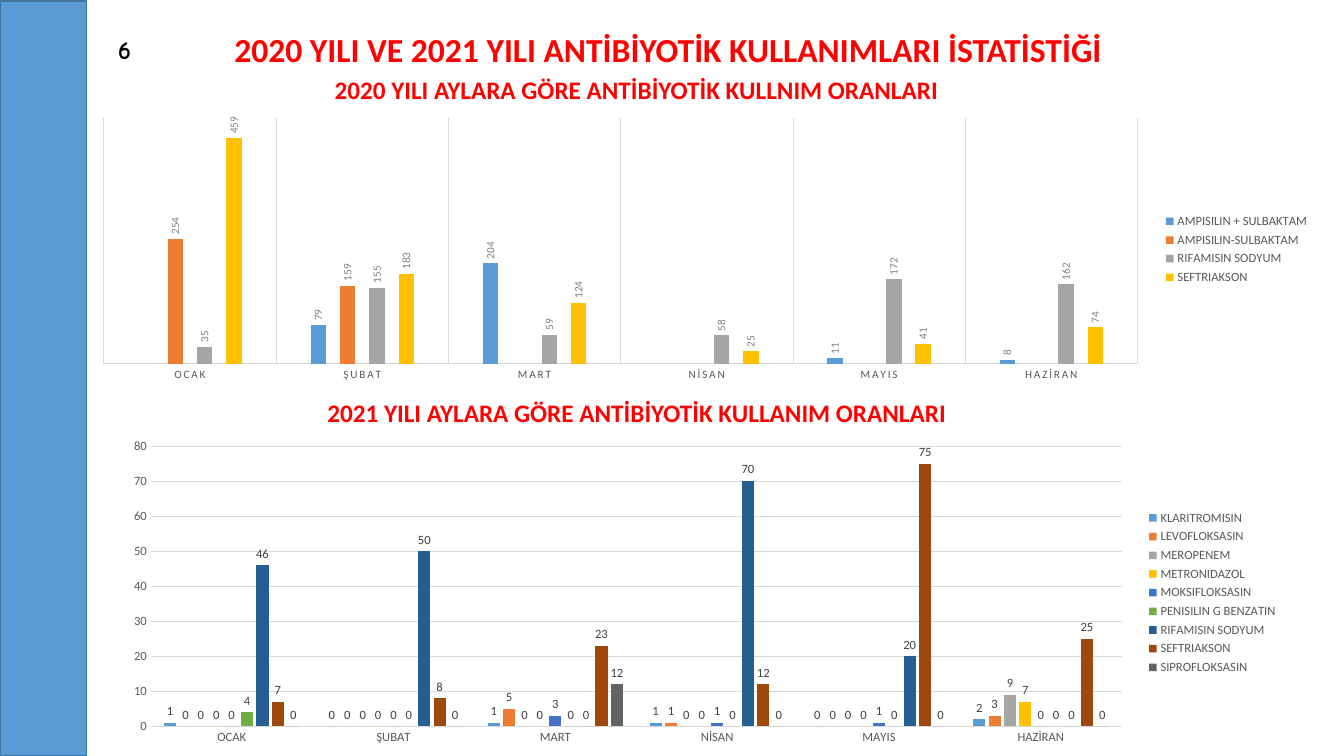
from dataclasses import dataclass
from typing import Optional

from lxml.etree import SubElement
from pptx import Presentation
from pptx.chart.data import CategoryChartData
from pptx.dml.color import RGBColor
from pptx.enum.chart import XL_CHART_TYPE as ChartType
from pptx.enum.chart import XL_LABEL_POSITION as LabelPosition
from pptx.enum.chart import XL_LEGEND_POSITION as LegendPosition
from pptx.enum.chart import XL_TICK_MARK as TickMark
from pptx.enum.shapes import MSO_SHAPE as Preset
from pptx.enum.text import MSO_AUTO_SIZE as AutoSize
from pptx.enum.text import PP_ALIGN as Align
from pptx.oxml.ns import qn
from pptx.util import Cm, Pt

MONTHS = ["OCAK", "ŞUBAT", "MART", "NİSAN", "MAYIS", "HAZİRAN"]
RED, GREY, PALE = "FF0000", "595959", "D9D9D9"


@dataclass
class Box:
    left: float
    top: float
    width: float
    height: float

    def lengths(self) -> tuple:
        return Cm(self.left), Cm(self.top), Cm(self.width), Cm(self.height)


@dataclass
class Drug:
    name: str
    color: str
    uses: list


@dataclass
class YearChart:
    box: Box
    plot: Box
    drugs: list
    gap: int
    overlap: int
    maximum: int
    month_size: int
    label_size: int
    label_color: str
    compact: bool  # upright labels, spaced months, month dividers, no value axis


def rgb(value: str) -> RGBColor:
    return RGBColor.from_string(value)


def style_font(font, size: float, color: str, name: str = "Calibri", bold: bool = False) -> None:
    font.size, font.name, font.bold = Pt(size), name, bold
    font.color.rgb = rgb(color)


def style_line(line, color: str, width: float = 0.75) -> None:
    line.color.rgb = rgb(color)
    line.width = Pt(width)


def add_text(slide, text: str, box: Box, *, size: float, color: str = RED,
             font: str = "Calibri", align: Optional[Align] = Align.CENTER) -> None:
    frame = slide.shapes.add_textbox(*box.lengths()).text_frame
    frame.word_wrap = False
    frame.auto_size = AutoSize.SHAPE_TO_FIT_TEXT
    paragraph = frame.paragraphs[0]
    paragraph.alignment = align
    run = paragraph.add_run()
    run.text = text
    style_font(run.font, size, color, font, bold=True)


def place_plot(chart, box: Box, plot: Box) -> None:
    """Fix the inner plot area, as fractions of the chart box."""
    area = chart._chartSpace.chart.plotArea
    for old in area.findall(qn("c:layout")):
        area.remove(old)
    layout = SubElement(area, qn("c:layout"))
    area.insert(0, layout)
    manual = SubElement(layout, qn("c:manualLayout"))
    settings = {
        "layoutTarget": "inner", "xMode": "edge", "yMode": "edge",
        "x": (plot.left - box.left) / box.width,
        "y": (plot.top - box.top) / box.height,
        "w": plot.width / box.width,
        "h": plot.height / box.height,
    }
    for tag, value in settings.items():
        SubElement(manual, qn(f"c:{tag}")).set("val", str(value))


def add_year_chart(slide, year: YearChart) -> None:
    data = CategoryChartData()
    data.categories = MONTHS
    for drug in year.drugs:
        data.add_series(drug.name, drug.uses)
    chart = slide.shapes.add_chart(ChartType.COLUMN_CLUSTERED, *year.box.lengths(), data).chart
    chart.has_title = False
    style_font(chart.font, 10, "000000")
    place_plot(chart, year.box, year.plot)

    # Legend
    chart.has_legend = True
    chart.legend.position = LegendPosition.RIGHT
    chart.legend.include_in_layout = False
    style_font(chart.legend.font, 9, GREY)

    # Axes
    months, counts = chart.category_axis, chart.value_axis
    for axis in (months, counts):
        axis.major_tick_mark = axis.minor_tick_mark = TickMark.NONE
    style_font(months.tick_labels.font, year.month_size, GREY)
    style_font(counts.tick_labels.font, 9, GREY)
    style_line(months.format.line, PALE)
    counts.format.line.fill.background()
    counts.minimum_scale, counts.maximum_scale = 0, year.maximum
    counts.visible = not year.compact
    counts.has_major_gridlines = not year.compact
    months.has_major_gridlines = year.compact
    style_line((months if year.compact else counts).major_gridlines.format.line, PALE)
    if year.compact:
        next(months._element.iter(qn("a:defRPr"))).set("spc", "120")

    # Columns and their labels
    columns = chart.plots[0]
    columns.vary_by_categories = False
    columns.gap_width, columns.overlap = year.gap, year.overlap
    for series, drug in zip(columns.series, year.drugs):
        series.format.fill.solid()
        series.format.fill.fore_color.rgb = rgb(drug.color)
        series.invert_if_negative = False
        labels = series.data_labels
        labels.show_value = True
        labels.position = LabelPosition.OUTSIDE_END
        style_font(labels.font, year.label_size, year.label_color)
        if year.compact:
            body = next(labels._element.iter(qn("a:bodyPr")))
            body.set("rot", "-5400000")
            body.set("vert", "horz")


def add_side_band(slide) -> None:
    band = slide.shapes.add_shape(Preset.RECTANGLE, *Box(0, 0.03, 2.18, 19.02).lengths())
    band.shadow.inherit = False
    band.fill.solid()
    band.fill.fore_color.rgb = rgb("5B9BD5")
    style_line(band.line, "43739E", 1)


YEAR_2020 = YearChart(
    Box(2.01, 2.82, 31.24, 6.93), Box(2.62, 2.97, 26.05, 6.2),
    [
        Drug("AMPISILIN + SULBAKTAM", "5B9BD5", [None, 79, 204, None, 11, 8]),
        Drug("AMPISILIN-SULBAKTAM", "ED7D31", [254, 159, None, None, None, None]),
        Drug("RIFAMISIN SODYUM", "A5A5A5", [35, 155, 59, 58, 172, 162]),
        Drug("SEFTRIAKSON", "FFC000", [459, 183, 124, 25, 41, 74]),
    ],
    gap=444, overlap=-90, maximum=500, month_size=8,
    label_size=8, label_color="808080", compact=True,
)
YEAR_2021 = YearChart(
    Box(2.79, 10.92, 29.67, 8.03), Box(3.8, 11.24, 24.47, 7.06),
    [
        Drug("KLARITROMISIN", "5B9BD5", [1, 0, 1, 1, 0, 2]),
        Drug("LEVOFLOKSASIN", "ED7D31", [0, 0, 5, 1, 0, 3]),
        Drug("MEROPENEM", "A5A5A5", [0, 0, 0, 0, 0, 9]),
        Drug("METRONIDAZOL", "FFC000", [0, 0, 0, 0, 0, 7]),
        Drug("MOKSIFLOKSASIN", "4472C4", [0, 0, 3, 1, 1, 0]),
        Drug("PENISILIN G BENZATIN", "70AD47", [4, 0, 0, 0, 0, 0]),
        Drug("RIFAMISIN SODYUM", "255E91", [46, 50, 0, 70, 20, 0]),
        Drug("SEFTRIAKSON", "9E480E", [7, 8, 23, 12, 75, 25]),
        Drug("SIPROFLOKSASIN", "636363", [0, 0, 12, 0, 0, 0]),
    ],
    gap=219, overlap=-27, maximum=80, month_size=9,
    label_size=9, label_color="404040", compact=False,
)


def main() -> None:
    deck = Presentation()
    deck.slide_width, deck.slide_height = Cm(33.87), Cm(19.05)
    slide = deck.slides.add_slide(deck.slide_layouts[6])
    add_side_band(slide)

    # Headings and page number
    add_text(slide, "2020 YILI VE 2021 YILI ANTİBİYOTİK KULLANIMLARI İSTATİSTİĞİ",
             Box(5.56, 0.61, 22.56, 1.27), size=24)
    add_text(slide, "6", Box(2.72, 0.74, 0.89, 1.02), size=18,
             color="000000", font="Comic Neue", align=Align.LEFT)
    add_text(slide, "2020 YILI AYLARA GÖRE ANTİBİYOTİK KULLNIM ORANLARI",
             Box(8.1, 1.75, 15.88, 1.02), size=18)
    add_text(slide, "2021 YILI AYLARA GÖRE ANTİBİYOTİK KULLANIM ORANLARI",
             Box(7.92, 9.88, 16.26, 1.02), size=18)

    for year in (YEAR_2020, YEAR_2021):
        add_year_chart(slide, year)
    deck.save("out.pptx")


if __name__ == "__main__":
    main()
